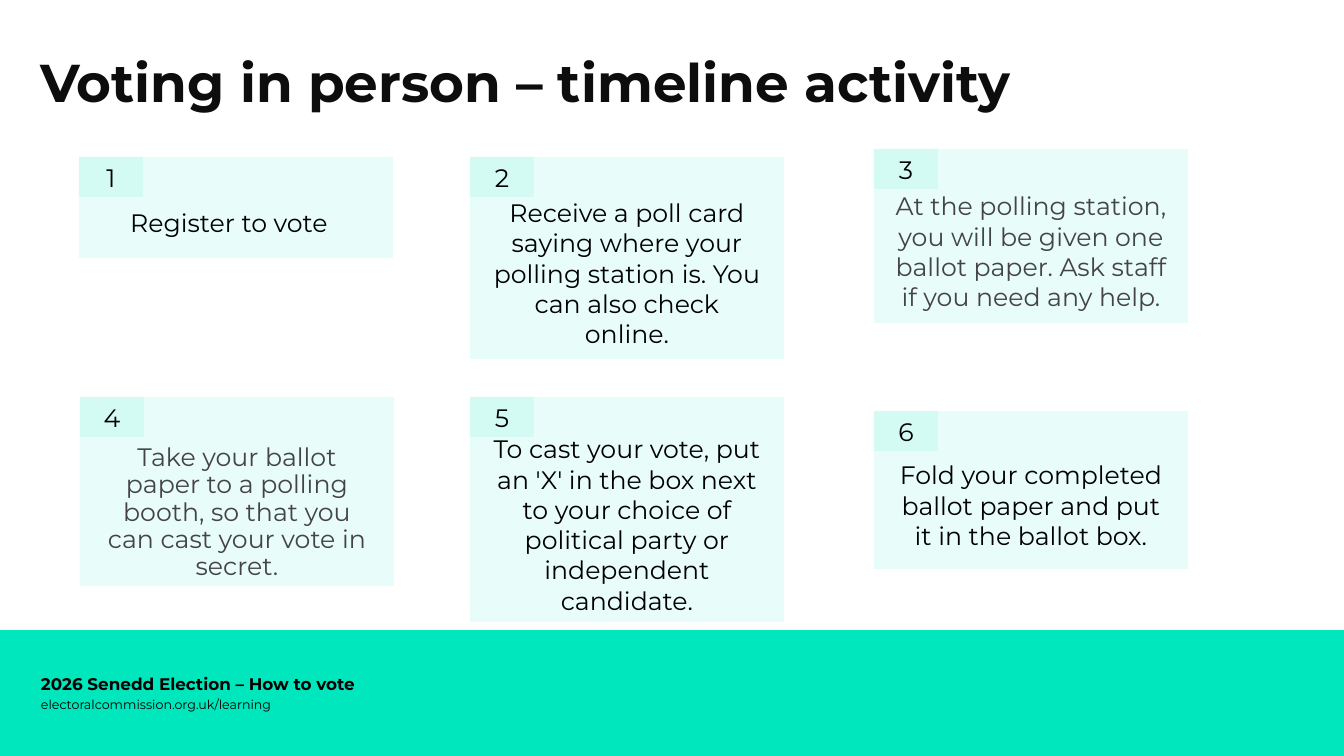
from lxml import etree
from pptx import Presentation
from pptx.dml.color import RGBColor
from pptx.enum.shapes import MSO_SHAPE
from pptx.enum.text import MSO_ANCHOR, PP_ALIGN
from pptx.oxml.ns import qn
from pptx.util import Emu, Pt

RECT = MSO_SHAPE.RECTANGLE
MIDDLE = MSO_ANCHOR.MIDDLE
LEFT, CENTER = PP_ALIGN.LEFT, PP_ALIGN.CENTER
TITLE_ONLY = 5

FONT = "Montserrat"
MINT, BLACK, INK, GREY = "00E7BD", "000000", "0D0D0D", "444444"
TINT = 9

PAGE_WIDTH, PAGE_HEIGHT = 1344, 756
CARD_WIDTH = 314
TAG_WIDTH, TAG_HEIGHT = 64, 40
SIDE_INSET = 20
TEXT_INSETS = (SIDE_INSET, 32, SIDE_INSET, 2)

# number, left, top, height, wording, text format
CARDS = [
    (1, 79, 157, 101, "Register to vote", {"insets": (SIDE_INSET, 32, 34, 2)}),
    (2, 470, 157, 202,
     "Receive a poll card saying where your polling station is. "
     "You can also check online.", {}),
    (3, 874, 149, 174,
     "At the polling station, you will be given one ballot paper. "
     "Ask staff if you need any help.", {"color": GREY}),
    (4, 80, 397, 189,
     "Take your ballot paper to a polling booth, so that you can cast "
     "your vote in secret.",
     {"color": GREY, "spacing": 0.9, "insets": (SIDE_INSET, 45, SIDE_INSET, 2)}),
    (5, 470, 397, 225,
     "To cast your vote, put an 'X' in the box next to your choice of "
     "political party or independent candidate.", {}),
    (6, 874, 411, 158,
     "Fold your completed ballot paper and put it in the ballot box.", {}),
]


def px(length):
    return Emu(round(length * 914400 / 100.8))


def rgb(code):
    return RGBColor.from_string(code)


def write(shape, text, size, color=BLACK, bold=False, align=LEFT,
          spacing=1.0, insets=(10, 5, 10, 5)):
    frame = shape.text_frame
    frame.word_wrap = True
    frame.vertical_anchor = MIDDLE
    for side, inset in zip(("left", "top", "right", "bottom"), insets):
        setattr(frame, f"margin_{side}", px(inset))
    frame.text = text
    para = frame.paragraphs[0]
    para.alignment = align
    para.line_spacing = spacing
    for name, value in {"name": FONT, "size": Pt(size), "bold": bold}.items():
        setattr(para.font, name, value)
    para.font.color.rgb = rgb(color)


def add_block(page, box, alpha=100):
    """Add a mint rectangle with the given opacity in percent."""
    block = page.shapes.add_shape(RECT, *map(px, box))
    block.shadow.inherit = False
    block.line.fill.background()
    block.fill.solid()
    block.fill.fore_color.rgb = rgb(MINT)
    if alpha < 100:
        color = block._element.spPr.find(f"{qn('a:solidFill')}/{qn('a:srgbClr')}")
        etree.SubElement(color, qn("a:alpha")).set("val", str(alpha * 1000))
    return block


def add_title(page, box):
    title = page.shapes.title
    for name, length in zip(("left", "top", "width", "height"), box):
        setattr(title, name, px(length))
    write(title, "Voting in person – timeline activity", 38, INK, True,
          spacing=0.9)


def add_footer(page, box):
    left, top, width, height = box
    add_block(page, box)
    lines = [
        (34, "2026 Senedd Election – How to vote", 12, True),
        (54, "electoralcommission.org.uk/learning", 9, False),
    ]
    for offset, text, size, bold in lines:
        label = page.shapes.add_textbox(
            px(left + 31), px(top + offset), px(771), px(40))
        write(label, text, size, bold=bold)


def add_card(page, box, number, text, style):
    left, top, width, height = box
    card = add_block(page, box, TINT)
    write(card, text, 18, align=CENTER, **{"insets": TEXT_INSETS, **style})
    tag = add_block(page, (left, top, TAG_WIDTH, TAG_HEIGHT), TINT)
    write(tag, str(number), 18, align=CENTER, insets=(0, 0, 0, 0))


def main():
    deck = Presentation()
    deck.slide_width, deck.slide_height = px(PAGE_WIDTH), px(PAGE_HEIGHT)
    page = deck.slides.add_slide(deck.slide_layouts[TITLE_ONLY])
    add_footer(page, (0, 630, PAGE_WIDTH, 126))
    add_title(page, (30, 51, 1245, 68))
    for number, left, top, height, text, style in CARDS:
        add_card(page, (left, top, CARD_WIDTH, height), number, text, style)
    deck.save("out.pptx")


if __name__ == "__main__":
    main()
